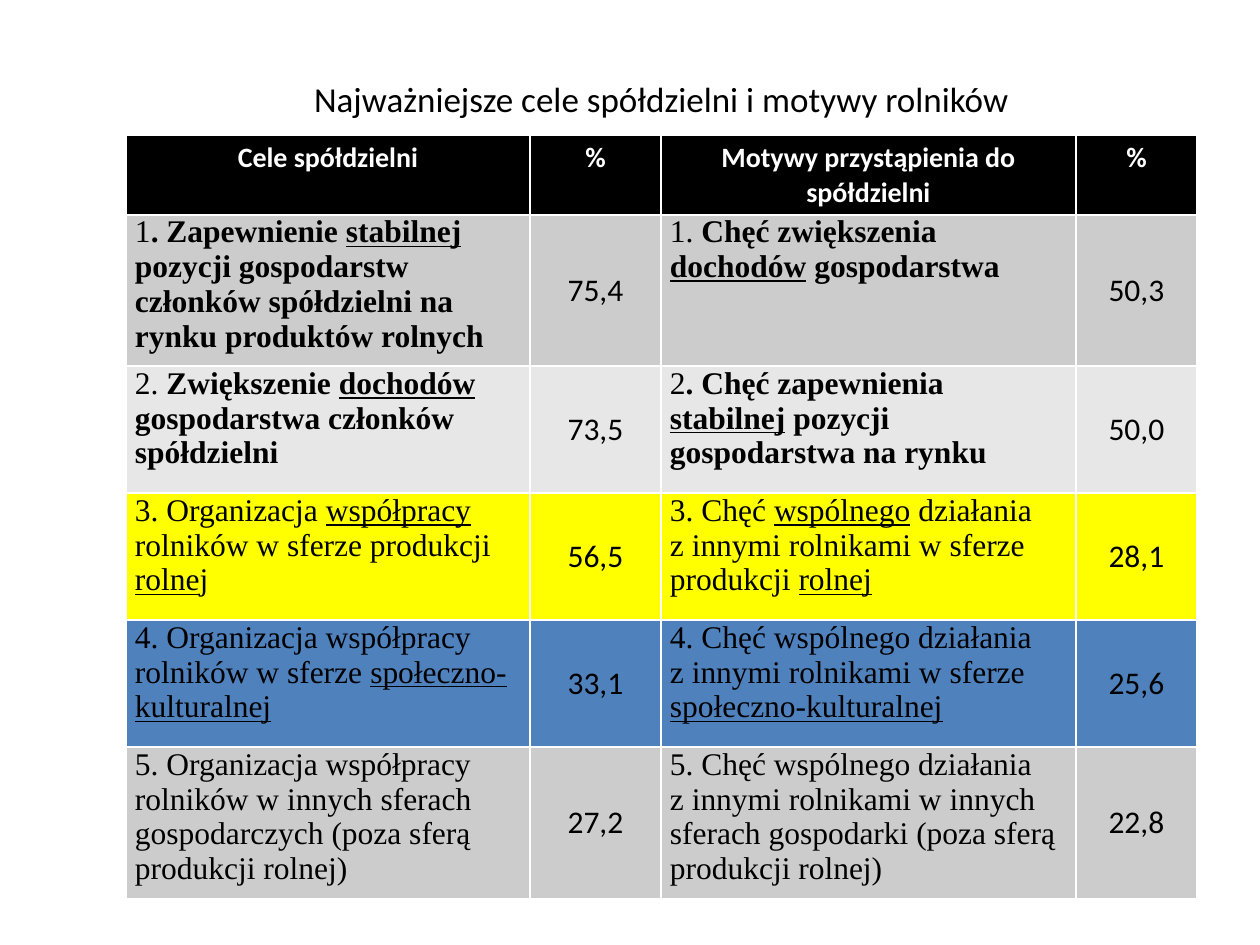
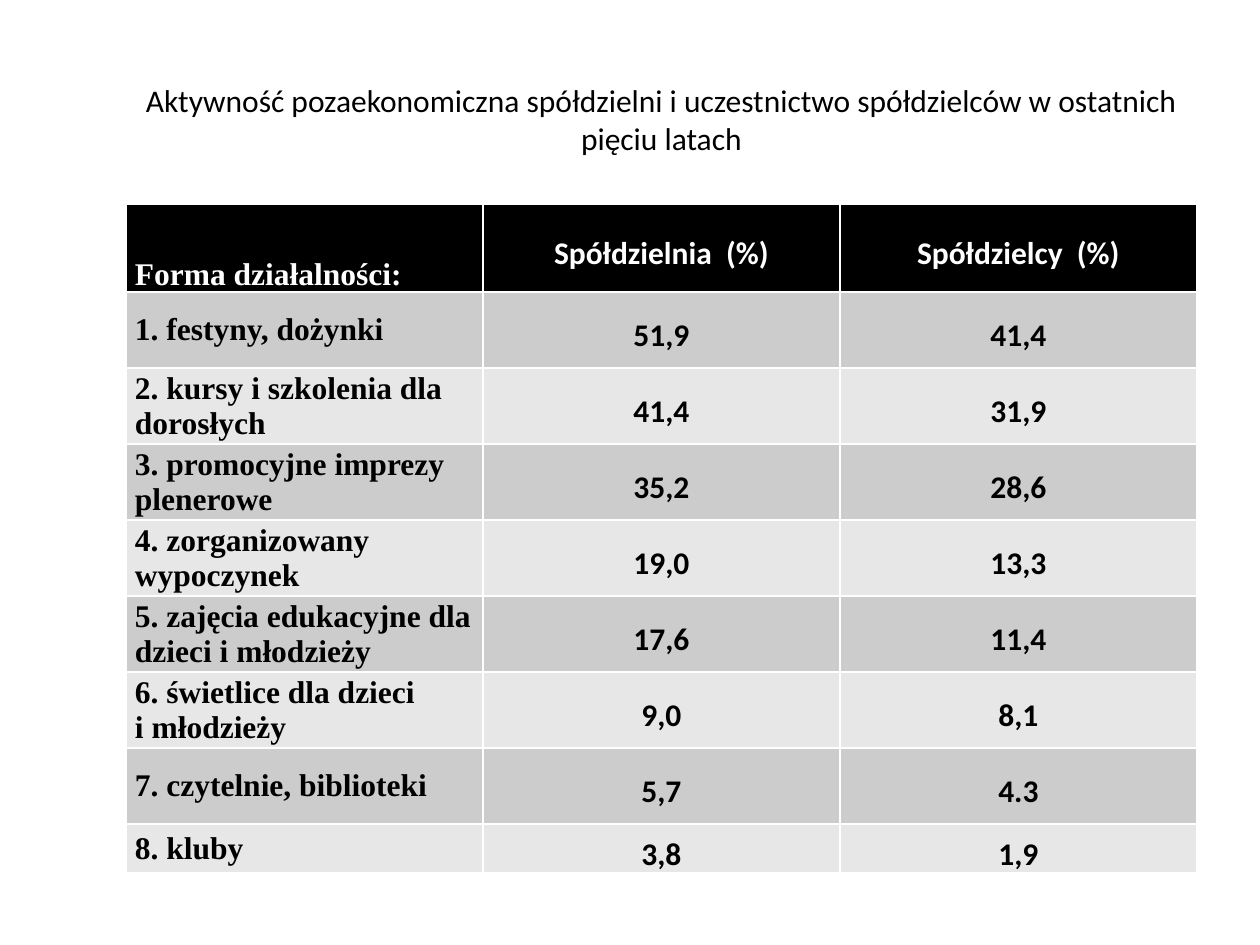
"""Builds two slides with survey tables about farmers' cooperatives."""
from pptx import Presentation
from pptx.dml.color import RGBColor
from pptx.enum.text import MSO_ANCHOR as Anchor, PP_ALIGN as Align
from pptx.util import Emu, Pt

EMU_PER_PX = 914400 / 126
BLACK = RGBColor(0x00, 0x00, 0x00)
WHITE = RGBColor(0xFF, 0xFF, 0xFF)
DARK_BAND = RGBColor(0xCC, 0xCC, 0xCC)
LIGHT_BAND = RGBColor(0xE7, 0xE7, 0xE7)
YELLOW = RGBColor(0xFF, 0xFF, 0x00)
BLUE = RGBColor(0x4F, 0x81, 0xBD)
SANS = "Calibri"
SERIF = "Times New Roman"
LEFT, CONTENT_WIDTH, TITLE_TOP = 126, 1071, 71
CELL_MARGIN = 9

GOAL_HEADERS = ["Cele spółdzielni", "%", "Motywy przystąpienia do spółdzielni", "%"]
GOAL_COLUMNS = [404, 131, 415, 121]
GOAL_ROW_HEIGHTS = [59, 101, 127, 127, 127, 137]
GOAL_FILLS = [DARK_BAND, LIGHT_BAND, YELLOW, BLUE, DARK_BAND]
GOALS = [
    ("1*. Zapewnienie _stabilnej_ pozycji gospodarstw członków spółdzielni na rynku produktów rolnych*",
     "75,4", "1. *Chęć zwiększenia _dochodów_ gospodarstwa*", "50,3"),
    ("2. *Zwiększenie _dochodów_ gospodarstwa członków spółdzielni*",
     "73,5", "2*. Chęć zapewnienia _stabilnej_ pozycji gospodarstwa na rynku*", "50,0"),
    ("3. Organizacja _współpracy _rolników w sferze produkcji _rolne_j",
     "56,5", "3. Chęć _wspólnego_ działania \nz innymi rolnikami w sferze produkcji _rolnej_", "28,1"),
    ("4. Organizacja współpracy rolników w sferze _społeczno-kulturalnej_",
     "33,1", "4. Chęć wspólnego działania \nz innymi rolnikami w sferze _społeczno-kulturalnej_", "25,6"),
    ("5. Organizacja współpracy rolników w innych sferach gospodarczych (poza sferą produkcji rolnej)",
     "27,2", "5. Chęć wspólnego działania \nz innymi rolnikami w innych sferach gospodarki "
     "(poza sferą produkcji rolnej)", "22,8"),
]

ACTIVITY_HEADERS = ["Forma działalności:", "Spółdzielnia  (%)", "Spółdzielcy  (%)"]
ACTIVITY_COLUMNS = [CONTENT_WIDTH // 3] * 3
ACTIVITY_ROW_HEIGHTS = [88] + [76] * 7 + [48]
ACTIVITIES = [
    ("1. festyny, dożynki", "51,9", "41,4"),
    ("2. kursy i szkolenia dla dorosłych", "41,4", "31,9"),
    ("3. promocyjne imprezy plenerowe", "35,2", "28,6"),
    ("4. zorganizowany wypoczynek", "19,0", "13,3"),
    ("5. zajęcia edukacyjne dla dzieci i młodzieży", "17,6", "11,4"),
    ("6. świetlice dla dzieci \ni młodzieży", "9,0", "8,1"),
    ("7. czytelnie, biblioteki", "5,7", "4.3"),
    ("8. kluby", "3,8", "1,9"),
]


def px(length):
    """Turn a length in px into EMU."""
    return Emu(round(length * EMU_PER_PX))


def add_marked_text(paragraph, text):
    """Add runs to a paragraph, where *...* is bold and _..._ is underlined."""
    for bold_index, bold_part in enumerate(text.split("*")):
        for underline_index, part in enumerate(bold_part.split("_")):
            for line_index, line in enumerate(part.split("\n")):
                if line_index:
                    paragraph.add_line_break()
                if line:
                    run = paragraph.add_run()
                    run.text = line
                    if bold_index % 2:
                        run.font.bold = True
                    if underline_index % 2:
                        run.font.underline = True


def style_paragraph(paragraph, font_name, size, color=BLACK, bold=False, align=Align.LEFT):
    """Set the font and alignment of a whole paragraph."""
    paragraph.alignment = align
    font = paragraph.font
    font.name, font.size, font.bold = font_name, Pt(size), bold
    font.color.rgb = color


def add_title(slide, text, height, size):
    """Add the centred slide title."""
    frame = slide.shapes.add_textbox(px(LEFT), px(TITLE_TOP), px(CONTENT_WIDTH), px(height)).text_frame
    frame.word_wrap = True
    frame.vertical_anchor = Anchor.MIDDLE
    paragraph = frame.paragraphs[0]
    paragraph.text = text
    style_paragraph(paragraph, SANS, size, align=Align.CENTER)


def add_table(slide, top, column_widths, row_heights):
    """Add an empty table with a header row and no banding."""
    table = slide.shapes.add_table(len(row_heights), len(column_widths), px(LEFT), px(top),
                                   px(CONTENT_WIDTH), px(sum(row_heights))).table
    table.horz_banding = False
    for column, width in zip(table.columns, column_widths):
        column.width = px(width)
    for row, height in zip(table.rows, row_heights):
        row.height = px(height)
    return table


def fill_cell(cell, text, fill, anchor=Anchor.MIDDLE, tight=True, **style):
    """Write one table cell and return its paragraph."""
    cell.fill.solid()
    cell.fill.fore_color.rgb = fill
    cell.vertical_anchor = anchor
    if tight:
        cell.margin_left = cell.margin_right = px(CELL_MARGIN)
        cell.margin_top = cell.margin_bottom = 0
    paragraph = cell.text_frame.paragraphs[0]
    add_marked_text(paragraph, text)
    style_paragraph(paragraph, **style)
    return paragraph


def add_goals_slide(presentation):
    """Add the slide on cooperative goals and farmers' motives."""
    slide = presentation.slides.add_slide(presentation.slide_layouts[6])
    add_title(slide, "Najważniejsze cele spółdzielni i motywy rolników", 54, 20)
    table = add_table(slide, 135, GOAL_COLUMNS, GOAL_ROW_HEIGHTS)
    for column, header in enumerate(GOAL_HEADERS):
        fill_cell(table.cell(0, column), header, BLACK, Anchor.TOP, tight=False, font_name=SANS,
                  size=16, color=WHITE, bold=True, align=Align.CENTER)
    for row, (values, fill) in enumerate(zip(GOALS, GOAL_FILLS), start=1):
        for column, text in enumerate(values):
            cell = table.cell(row, column)
            if column % 2:
                fill_cell(cell, text, fill, font_name=SANS, size=18, align=Align.CENTER)
            else:
                paragraph = fill_cell(cell, text, fill, Anchor.TOP, font_name=SERIF, size=18)
                paragraph.space_before = Pt(0 if column else 6)


def add_activities_slide(presentation):
    """Add the slide on activity beyond the economy."""
    slide = presentation.slides.add_slide(presentation.slide_layouts[6])
    add_title(slide, "Aktywność pozaekonomiczna spółdzielni i uczestnictwo spółdzielców "
                     "w ostatnich pięciu latach", 95, 18)
    table = add_table(slide, 204, ACTIVITY_COLUMNS, ACTIVITY_ROW_HEIGHTS)
    for row, values in enumerate([ACTIVITY_HEADERS] + ACTIVITIES):
        fill = (DARK_BAND if row % 2 else LIGHT_BAND) if row else BLACK
        color = BLACK if row else WHITE
        for column, text in enumerate(values):
            anchor = Anchor.MIDDLE if row or column else Anchor.BOTTOM
            paragraph = fill_cell(table.cell(row, column), text, fill, anchor, size=18, color=color,
                                  bold=True, font_name=SANS if column else SERIF,
                                  align=Align.CENTER if column else Align.LEFT)
            if column:
                paragraph.line_spacing = 1.3
            elif row:
                paragraph.space_before = Pt(6)
            if row or column:
                paragraph.space_after = Pt(6)


def main():
    """Build and save the presentation."""
    presentation = Presentation()
    presentation.slide_width, presentation.slide_height = px(1260), px(945)
    add_goals_slide(presentation)
    add_activities_slide(presentation)
    presentation.save("out.pptx")


if __name__ == "__main__":
    main()
